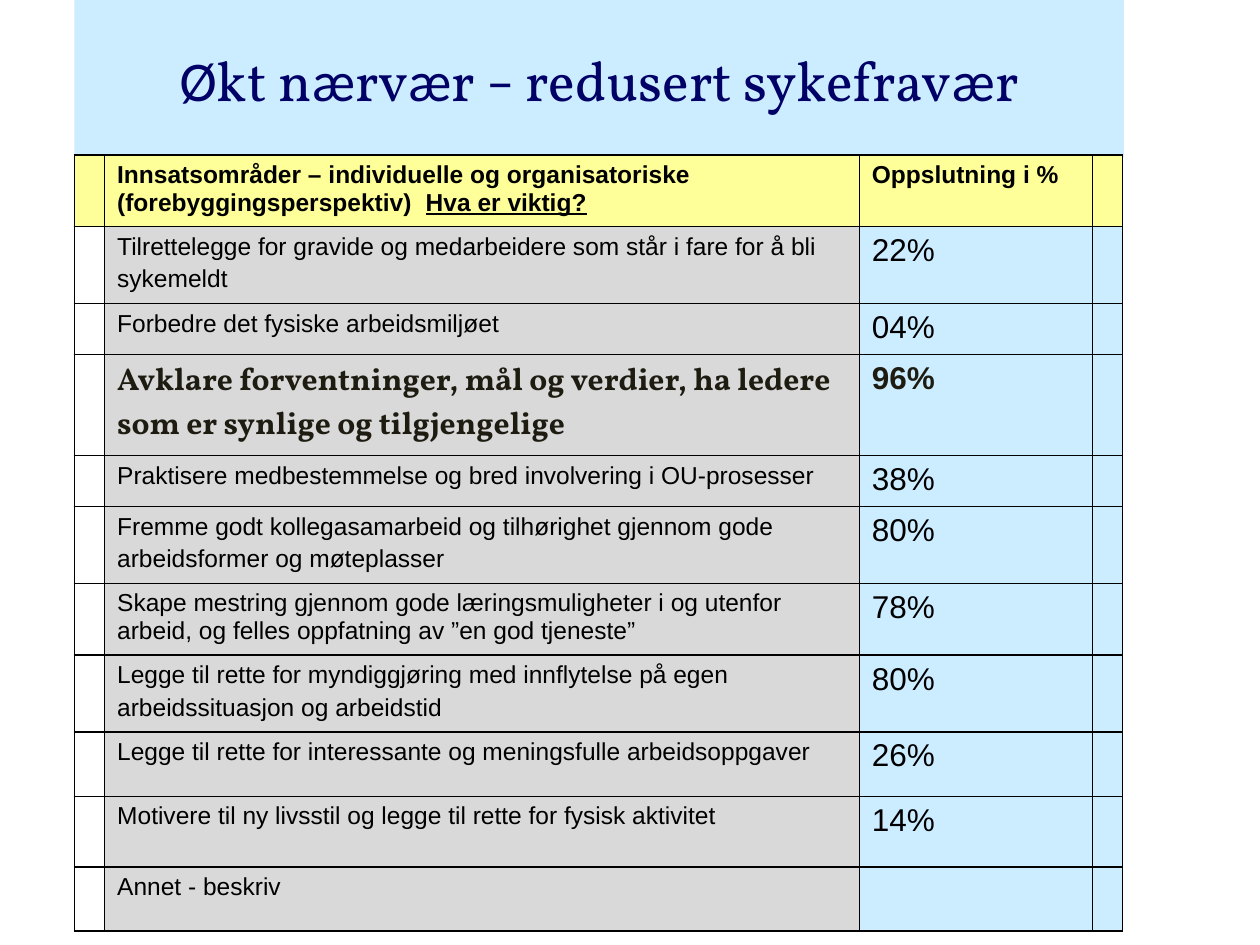
import itertools

import pptx
import pptx.dml.color
import pptx.enum.text
import pptx.oxml.ns
import pptx.util
from lxml import etree

Inches = pptx.util.Inches
Pt = pptx.util.Pt
RGBColor = pptx.dml.color.RGBColor

NAVY = RGBColor(0x00, 0x00, 0x66)
BLACK = RGBColor(0x00, 0x00, 0x00)
DARK = RGBColor(0x1E, 0x1C, 0x11)
PALE_BLUE = RGBColor(0xCC, 0xEC, 0xFF)
YELLOW = RGBColor(0xFF, 0xFF, 0x99)
GREY = RGBColor(0xD9, 0xD9, 0xD9)

TITLE = "Økt nærvær – redusert sykefravær"
CALIBRI_LETTERS = "Øæ–"

HEADER = {"name": "Arial", "size": Pt(14), "bold": True}
AREA = {"name": "Arial", "size": Pt(14), "bold": False}
SHARE = {"name": "Arial", "size": Pt(18), "bold": False}
KEY_AREA = {"name": "Vollkorn", "size": Pt(18), "bold": True}
KEY_SHARE = {"name": "Arial", "size": Pt(18), "bold": True}

COLUMN_WIDTHS = [0.24, 5.99, 1.85, 0.23]
HEADER_HEIGHT = 0.57
KEY_ROW = 3
COMPACT_ROW = 6
ROWS = [
    (0.61, ["Tilrettelegge for gravide og medarbeidere som står i fare for å bli",
            "sykemeldt"], "22%"),
    (0.4, ["Forbedre det fysiske arbeidsmiljøet"], "04%"),
    (0.8, ["Avklare forventninger, mål og verdier, ha ledere",
           "som er synlige og tilgjengelige"], "96%"),
    (0.4, ["Praktisere medbestemmelse og bred involvering i OU-prosesser"], "38%"),
    (0.61, ["Fremme godt kollegasamarbeid og tilhørighet gjennom gode",
            "arbeidsformer og møteplasser"], "80%"),
    (0.57, ["Skape mestring gjennom gode læringsmuligheter i og utenfor",
            "arbeid, og felles oppfatning av ”en god tjeneste”"], "78%"),
    (0.61, ["Legge til rette for myndiggjøring med innflytelse på egen",
            "arbeidssituasjon og arbeidstid"], "80%"),
    (0.51, ["Legge til rette for interessante og meningsfulle arbeidsoppgaver"], "26%"),
    (0.56, ["Motivere til ny livsstil og legge til rette for fysisk aktivitet"], "14%"),
    (0.51, ["Annet - beskriv"], ""),
]


def add_span(para, text, formats, color):
    span = para.add_run()
    span.text = text
    for name, value in formats.items():
        setattr(span.font, name, value)
    span.font.color.rgb = color
    return span


def fill_title(title):
    for name, value in {"left": 0.59, "top": 0, "width": 8.33, "height": 1.25}.items():
        setattr(title, name, Inches(value))
    title.fill.solid()
    title.fill.fore_color.rgb = PALE_BLUE
    frame = title.text_frame
    frame.vertical_anchor = pptx.enum.text.MSO_ANCHOR.MIDDLE
    para = frame.paragraphs[0]
    para.alignment = pptx.enum.text.PP_ALIGN.CENTER
    for special, letters in itertools.groupby(TITLE, lambda letter: letter in CALIBRI_LETTERS):
        face = "Calibri" if special else "Vollkorn"
        add_span(para, "".join(letters), {"name": face, "size": Pt(32)}, NAVY)


def style_cell(cell, color):
    properties = cell._tc.get_or_add_tcPr()
    for side in ("a:lnL", "a:lnR", "a:lnT", "a:lnB"):
        line = etree.SubElement(properties, pptx.oxml.ns.qn(side), w=str(Pt(1)))
        solid = etree.SubElement(line, pptx.oxml.ns.qn("a:solidFill"))
        etree.SubElement(solid, pptx.oxml.ns.qn("a:srgbClr"), val=str(BLACK))
    if color is None:
        cell.fill.background()
    else:
        cell.fill.solid()
        cell.fill.fore_color.rgb = color


def write_lines(cell, lines, formats, color=BLACK, indent=0.38, gap=0):
    frame = cell.text_frame
    for index, text in enumerate(lines):
        para = frame.add_paragraph() if index else frame.paragraphs[0]
        if indent:
            properties = para._p.get_or_add_pPr()
            properties.set("marL", str(Inches(indent)))
            properties.set("indent", str(-Inches(indent)))
        if index and gap:
            para.space_before = Pt(gap)
        add_span(para, text, formats, color)


def fill_header(table):
    table.rows[0].height = Inches(HEADER_HEIGHT)
    for cell in table.rows[0].cells:
        style_cell(cell, YELLOW)
    area = table.cell(0, 1)
    write_lines(area, ["Innsatsområder – individuelle og organisatoriske",
                       "(forebyggingsperspektiv)  "], HEADER)
    question = add_span(area.text_frame.paragraphs[1], "Hva er viktig?", HEADER, BLACK)
    question.font.underline = True
    write_lines(table.cell(0, 2), ["Oppslutning i %"], HEADER)


def fill_row(table, number, height, lines, share):
    table.rows[number].height = Inches(height)
    for cell, color in zip(table.rows[number].cells, (None, GREY, PALE_BLUE, PALE_BLUE)):
        style_cell(cell, color)
    key = number == KEY_ROW
    color = DARK if key else BLACK
    write_lines(table.cell(number, 1), lines, KEY_AREA if key else AREA, color,
                indent=0.5 if number == 1 else 0.38,
                gap=0 if number in (KEY_ROW, COMPACT_ROW) else 2.8)
    if share:
        write_lines(table.cell(number, 2), [share], KEY_SHARE if key else SHARE,
                    color, indent=0)


def add_areas_table(page):
    height = HEADER_HEIGHT + sum(row[0] for row in ROWS)
    frame = page.shapes.add_table(
        len(ROWS) + 1, len(COLUMN_WIDTHS),
        Inches(0.59), Inches(1.23), Inches(sum(COLUMN_WIDTHS)), Inches(height))
    table = frame.table
    table.first_row = False
    table.horz_banding = False
    for column, width in zip(table.columns, COLUMN_WIDTHS):
        column.width = Inches(width)
    fill_header(table)
    for number, row in enumerate(ROWS, start=1):
        fill_row(table, number, *row)


def main():
    deck = pptx.Presentation()
    deck.slide_width = Inches(10)
    deck.slide_height = Inches(7.5)
    page = deck.slides.add_slide(deck.slide_layouts[5])
    fill_title(page.shapes.title)
    add_areas_table(page)
    deck.save("out.pptx")


if __name__ == "__main__":
    main()
